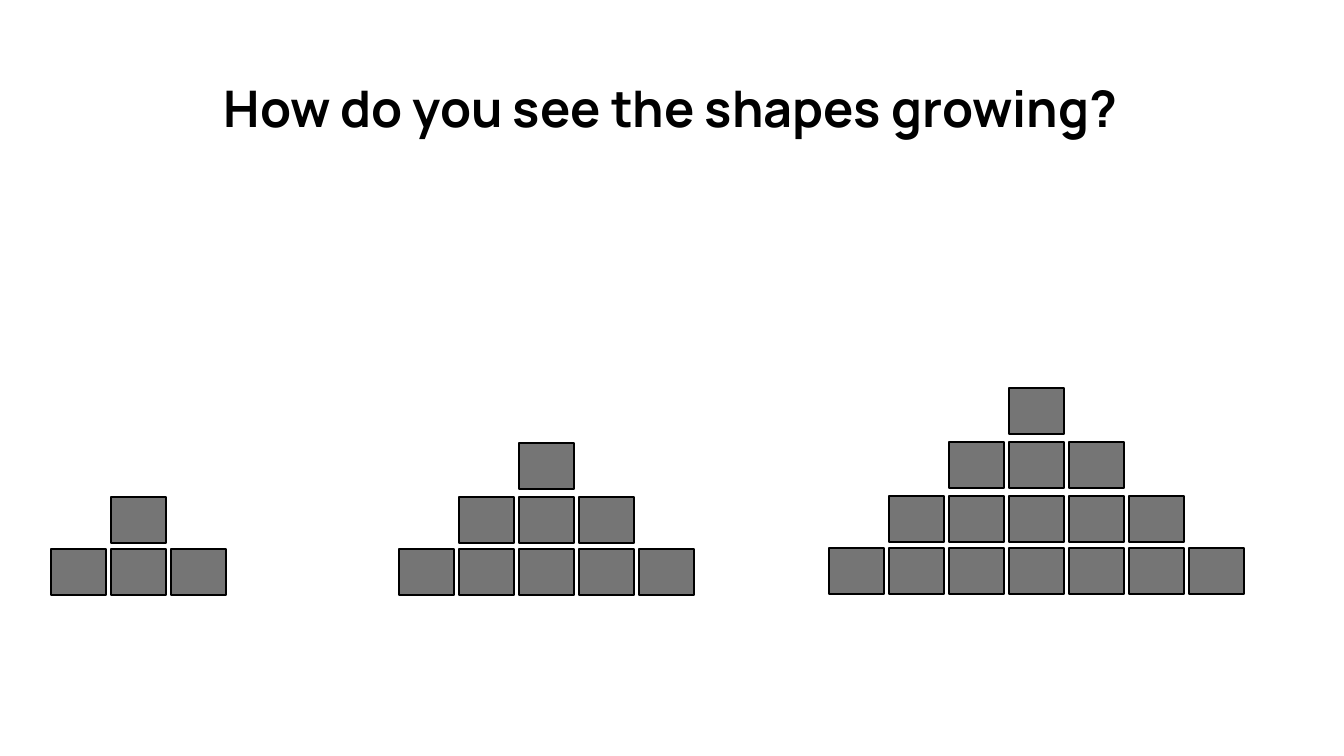
from pptx import Presentation
from pptx.dml.color import RGBColor as RGB
from pptx.enum.shapes import MSO_SHAPE as SHAPE
from pptx.enum.text import MSO_ANCHOR as ANCHOR, PP_ALIGN as ALIGN
from pptx.util import Pt

THEME = {
    "font": "Manrope",
    "title_size": Pt(27),
    "ink": RGB(0, 0, 0),
    "block": RGB(0x75, 0x75, 0x75),
    "line": Pt(0.75),
}


def px(n):
    return round(n * 9144000 / 1344)


prs = Presentation()
prs.slide_width, prs.slide_height = px(1344), px(756)
s = prs.slides.add_slide(prs.slide_layouts[6])

BLOCK_W, BLOCK_H, STEP = 55, 46, 60
ROW_RISE = [0, 52, 106, 160]
PYRAMIDS = [(111, 549, 2), (519, 549, 3), (1009, 548, 4)]

for middle, base, rows in PYRAMIDS:
    for row in range(rows):
        reach = rows - 1 - row
        for col in range(-reach, reach + 1):
            sp = s.shapes.add_shape(
                SHAPE.RECTANGLE,
                px(middle + col * STEP), px(base - ROW_RISE[row]),
                px(BLOCK_W), px(BLOCK_H),
            )
            sp.shadow.inherit = False
            sp.fill.solid()
            sp.fill.fore_color.rgb = THEME["block"]
            sp.line.color.rgb = THEME["ink"]
            sp.line.width = THEME["line"]

title = s.shapes.add_textbox(px(44), px(60), px(1253), px(94))
tf = title.text_frame
tf.word_wrap = True
tf.vertical_anchor = ANCHOR.MIDDLE
tf.margin_left = tf.margin_right = tf.margin_top = tf.margin_bottom = px(13)
p = tf.paragraphs[0]
p.text = "How do you see the shapes growing?"
p.alignment = ALIGN.CENTER
p.font.name = THEME["font"]
p.font.size = THEME["title_size"]
p.font.bold = True
p.font.color.rgb = THEME["ink"]

prs.save("out.pptx")
